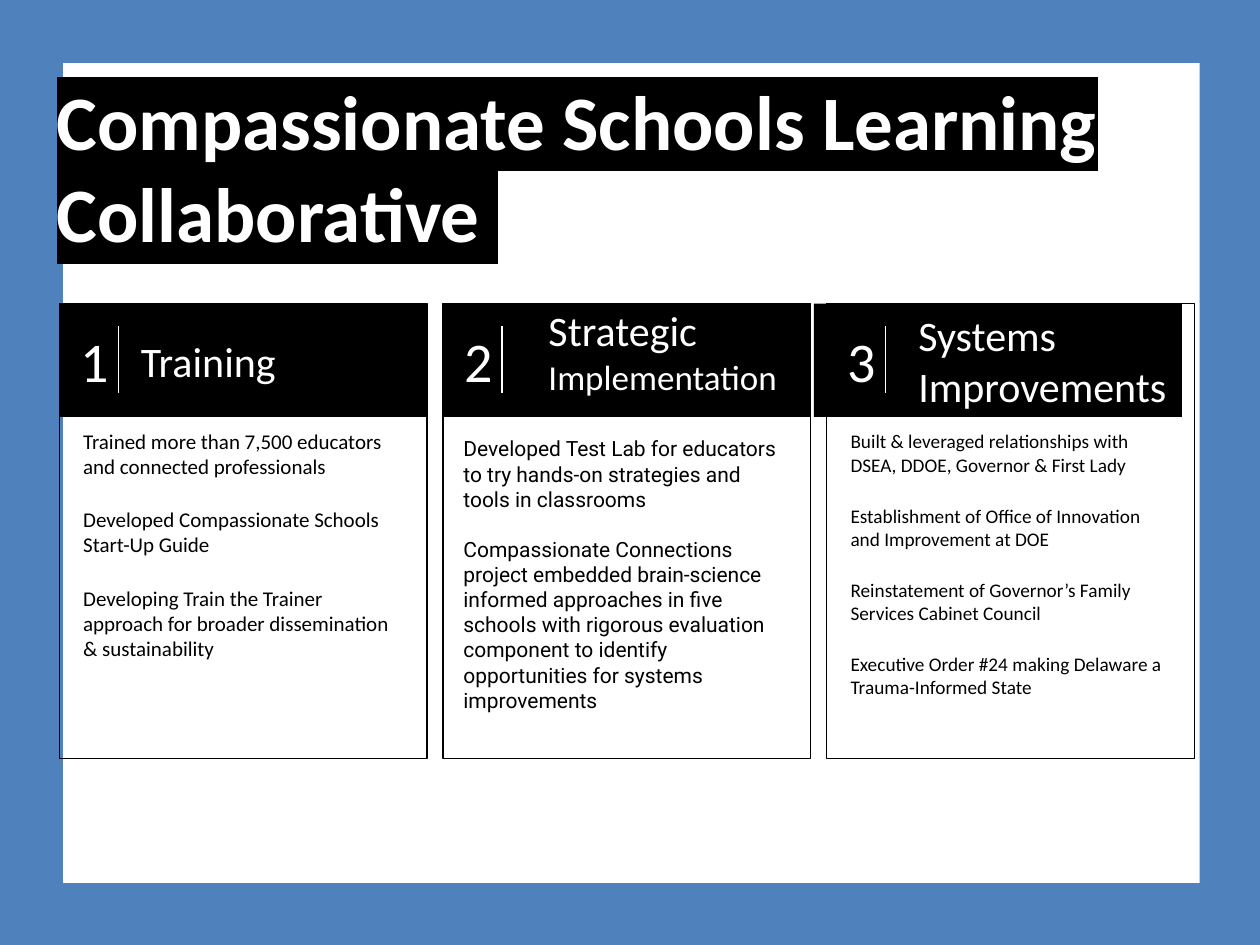
from lxml import etree
from pptx import Presentation
from pptx.dml.color import RGBColor
from pptx.enum import shapes, text
from pptx.oxml import ns
from pptx.util import Inches, Pt

BLUE = RGBColor(0x4F, 0x81, 0xBD)
BLACK = RGBColor(0, 0, 0)
WHITE = RGBColor(255, 255, 255)
TOP, HEAD, TALL, WIDE, STEP = 2.41, 0.9, 3.61, 2.92, 3.045

# Text frame, paragraph and font values shared by all text
FRAME = dict(word_wrap=True, auto_size=text.MSO_AUTO_SIZE.NONE,
             **{f"margin_{side}": Inches(0.1)
                for side in ("left", "top", "right", "bottom")})


def apply(obj, values):
    for name, value in values.items():
        setattr(obj, name, value)


def place(shape, box):
    names = ("left", "top", "width", "height")
    apply(shape, dict(zip(names, map(Inches, box))))


def write(shape, paras, color, anchor="TOP", align="LEFT", gap=0,
          face="Calibri", bold=False):
    """Each paragraph is a list of (words, size) runs."""
    frame = shape.text_frame
    apply(frame, FRAME)
    frame.vertical_anchor = text.MSO_ANCHOR[anchor]
    for i, runs in enumerate(paras):
        para = frame.add_paragraph() if i else frame.paragraphs[0]
        apply(para, dict(alignment=text.PP_ALIGN[align], line_spacing=1.0,
                         space_before=Pt(gap if i else 0), space_after=Pt(0)))
        props = para._p.get_or_add_pPr()
        apply_xml = {"marL": "0", "indent": "0"}
        for key, value in apply_xml.items():
            props.set(key, value)
        etree.SubElement(props, ns.qn("a:buNone"))
        for words, size in runs:
            run = para.add_run()
            run.text = words
            apply(run.font, dict(name=face, size=Pt(size), bold=bold))
            run.font.color.rgb = color


def label(slide, box, runs, align="LEFT"):
    item = slide.shapes.add_textbox(*map(Inches, box))
    write(item, [runs], WHITE, "MIDDLE", align)


def rect(slide, box, fill=None, line=None):
    item = slide.shapes.add_shape(shapes.MSO_SHAPE.RECTANGLE,
                                  *map(Inches, box))
    item.shadow.inherit = False
    if fill is None:
        item.fill.background()
    else:
        item.fill.solid()
        item.fill.fore_color.rgb = fill
    if line is None:
        item.line.fill.background()
    else:
        item.line.color.rgb = line
        item.line.width = Pt(0.75)
    return item


def border(slide, wide, tall, edge):
    bars = [(0, 0, edge, tall), (wide - edge + 0.02, 0, edge - 0.02, tall),
            (edge, 0, wide - edge, edge),
            (edge, tall - edge + 0.01, wide - edge, edge - 0.01)]
    for box in bars:
        bar = rect(slide, box, BLUE)
        # Send the bar behind the placeholders
        slide.shapes._spTree.insert(2, bar._element)


def title(slide, box):
    head = slide.shapes.title
    place(head, box)
    write(head, [[("Compassionate Schools Learning Collaborative ", 44)]],
          WHITE, "BOTTOM", bold=True)
    # Black highlight behind the words
    fill = head._element.find(".//" + ns.qn("a:r")).find(
        ".//" + ns.qn("a:solidFill"))
    mark = etree.Element(ns.qn("a:highlight"))
    etree.SubElement(mark, ns.qn("a:srgbClr")).set("val", str(BLACK))
    fill.addnext(mark)


def column(slide, box, num, runs, spot, shift=0):
    """Frame, black head, number, divider and heading."""
    x, y, w, h = box
    rect(slide, box, line=BLACK)
    rect(slide, (x + shift, y, w, HEAD), BLACK)
    label(slide, (x + 0.07, y, 0.38, HEAD), [(num, 32)], "CENTER")
    ends = (x + 0.47, y + 0.18, x + 0.47, y + 0.71)
    rule = slide.shapes.add_connector(shapes.MSO_CONNECTOR.STRAIGHT,
                                      *map(Inches, ends))
    rule.line.color.rgb = WHITE
    rule.line.width = Pt(0.75)
    etree.SubElement(rule._element.spPr, ns.qn("a:effectLst"))
    dx, dy, tall = spot
    label(slide, (x + dx, y + dy, 2.3, tall), runs)


def points(item, box, lines, size, **look):
    place(item, box)
    write(item, [[(line, size)] for line in lines], BLACK, **look)


def main():
    deck = Presentation()
    deck.slide_width, deck.slide_height = Inches(10), Inches(7.5)
    slide = deck.slides.add_slide(deck.slide_layouts[3])
    border(slide, 10, 7.5, 0.5)
    title(slide, (0.35, 1.15, 9.75, 1))

    # Three columns
    heads = [("1", [("Training", 24)], (0.55, 0, HEAD)),
             ("2", [("Strategic ", 24), ("Implementation", 20)],
              (0.74, 0.18, 0.39)),
             ("3", [("Systems Improvements", 24)], (0.63, 0, HEAD), -0.1)]
    for i, parts in enumerate(heads):
        column(slide, (0.47 + i * STEP, TOP, WIDE, TALL), *parts)

    # Lists below the heads
    left, right = slide.placeholders[1], slide.placeholders[2]
    points(left, (0.56, 3.3, 2.77, 2.83), [
        "Trained more than 7,500 educators and connected professionals",
        "Developed Compassionate Schools Start-Up Guide",
        "Developing Train the Trainer approach for broader dissemination "
        "& sustainability"], 12, gap=16)
    middle = slide.shapes.add_textbox(0, 0, 0, 0)
    points(middle, (3.58, 3.36, 2.77, 2.49), [
        "Developed Test Lab for educators to try hands-on strategies and "
        "tools in classrooms",
        "Compassionate Connections project embedded brain-science informed "
        "approaches in five schools with rigorous evaluation component to "
        "identify opportunities for systems improvements"],
        12, gap=14, face="Roboto")
    points(right, (6.65, 3.31, 2.77, 2.6), [
        "Built & leveraged relationships with DSEA, DDOE, Governor & First "
        "Lady",
        "Establishment of Office of Innovation and Improvement at DOE",
        "Reinstatement of Governor’s Family Services Cabinet Council",
        "Executive Order #24 making Delaware a Trauma-Informed State"],
        11, gap=16)
    deck.save("out.pptx")


if __name__ == "__main__":
    main()
